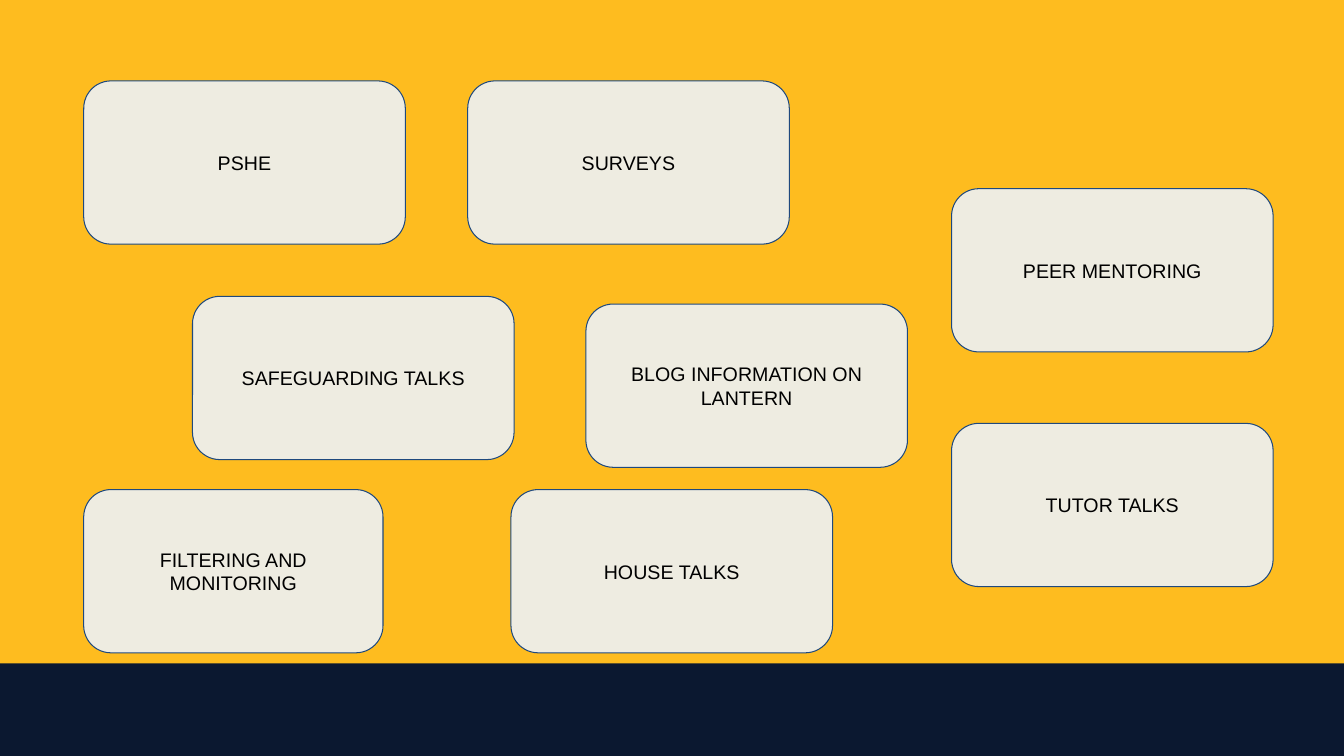
from pptx import Presentation
from pptx.dml.color import RGBColor
from pptx.enum.shapes import MSO_SHAPE
from pptx.enum.text import MSO_ANCHOR, PP_ALIGN
from pptx.util import Pt

RECTANGLE = MSO_SHAPE.RECTANGLE
ROUNDED = MSO_SHAPE.ROUNDED_RECTANGLE
MIDDLE = MSO_ANCHOR.MIDDLE
CENTER = PP_ALIGN.CENTER

# Content: paragraphs, left, top, width (points)
CARD_WIDTH, CARD_HEIGHT = 229.7, 116.6
LEFT_EDGE, RIGHT_COLUMN = 59.8, 679.7
TOP_ROW, BOTTOM_ROW = 57.8, 349.7
TOPICS = [
    (["PSHE"], LEFT_EDGE, TOP_ROW, CARD_WIDTH),
    (["SURVEYS"], 334.1, TOP_ROW, CARD_WIDTH),
    (["SAFEGUARDING TALKS"], 137.5, 211.7, CARD_WIDTH),
    (["BLOG INFORMATION ON LANTERN"], 418.5, 217.2, CARD_WIDTH),
    (["TUTOR TALKS"], RIGHT_COLUMN, 302.4, CARD_WIDTH),
    (["HOUSE TALKS"], 365, BOTTOM_ROW, CARD_WIDTH),
    (["PEER MENTORING"], RIGHT_COLUMN, 134.8, CARD_WIDTH),
    (["FILTERING AND", "MONITORING"], LEFT_EDGE, BOTTOM_ROW, 213.8),
]

# Theme
THEME = {
    "background": RGBColor.from_string("FEBC1F"),
    "band": RGBColor.from_string("0B1830"),
    "card": RGBColor.from_string("EEECE1"),
    "outline": RGBColor.from_string("1F497D"),
    "text": RGBColor.from_string("000000"),
    "font": "Arial",
    "size": Pt(14),
}
SLIDE_WIDTH, SLIDE_HEIGHT = 960, 540
BAND_TOP = 473.8
CORNER = 0.167
INSET = Pt(7.2)


def add_panel(slide, kind, left, top, width, height, colour):
    panel = slide.shapes.add_shape(kind, Pt(left), Pt(top), Pt(width), Pt(height))
    panel.shadow.inherit = False
    panel.fill.solid()
    panel.fill.fore_color.rgb = colour
    return panel


def add_topic(slide, lines, left, top, width):
    card = add_panel(slide, ROUNDED, left, top, width, CARD_HEIGHT, THEME["card"])
    card.adjustments[0] = CORNER
    card.line.color.rgb = THEME["outline"]
    card.line.width = Pt(0.75)

    label = card.text_frame
    label.word_wrap = True
    label.vertical_anchor = MIDDLE
    label.margin_left = label.margin_right = INSET
    label.margin_top = label.margin_bottom = INSET
    label.text = "\n".join(lines)
    for paragraph in label.paragraphs:
        paragraph.alignment = CENTER
        paragraph.font.name = THEME["font"]
        paragraph.font.size = THEME["size"]
        paragraph.font.color.rgb = THEME["text"]


def main():
    deck = Presentation()
    deck.slide_width, deck.slide_height = Pt(SLIDE_WIDTH), Pt(SLIDE_HEIGHT)
    slide = deck.slides.add_slide(deck.slide_layouts[6])

    # Background and bottom band
    slide.background.fill.solid()
    slide.background.fill.fore_color.rgb = THEME["background"]
    band = add_panel(slide, RECTANGLE, 0, BAND_TOP, SLIDE_WIDTH,
                     SLIDE_HEIGHT - BAND_TOP, THEME["band"])
    band.line.fill.background()

    # Topic cards
    for topic in TOPICS:
        add_topic(slide, *topic)

    deck.save("out.pptx")


if __name__ == "__main__":
    main()
